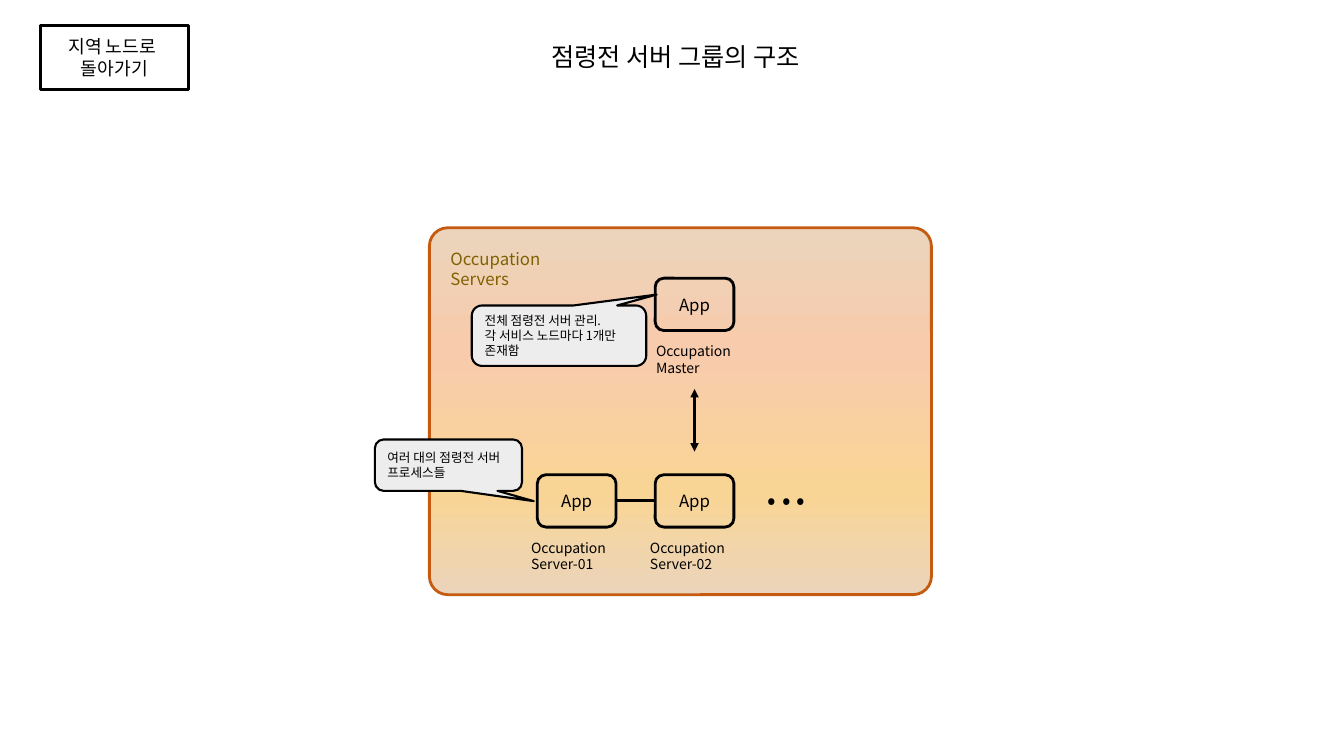
from lxml import etree
from pptx import Presentation
from pptx.dml.color import RGBColor
from pptx.enum.shapes import MSO_CONNECTOR, MSO_SHAPE
from pptx.enum.text import MSO_ANCHOR, PP_ALIGN
from pptx.oxml.ns import qn
from pptx.util import Pt

RECT, ROUND = MSO_SHAPE.RECTANGLE, MSO_SHAPE.ROUNDED_RECTANGLE
BUBBLE = MSO_SHAPE.ROUNDED_RECTANGULAR_CALLOUT
LEFT, CENTER = PP_ALIGN.LEFT, PP_ALIGN.CENTER
TOP, MIDDLE = MSO_ANCHOR.TOP, MSO_ANCHOR.MIDDLE
STRAIGHT = MSO_CONNECTOR.STRAIGHT

# Content: all lengths in points
FONT = "Noto Sans CJK KR"
COLORS = {"ink": "000000", "edge": "C55A11", "gold": "806000", "note": "EDEDED"}
STOPS = [(0, "EBD4BB"), (33, "F8CBAD"), (72, "F9D595"), (100, "EBD4BB")]
TITLE = "점령전 서버 그룹의 구조"
BACK = ["지역 노드로 ", "돌아가기"]
GROUP = (306.7, 162.7, 358.6, 262.1)
APP_W, APP_H = 56.2, 37.4
COL_1, COL_2 = 383.8, 468
ROW_1, ROW_2 = 198.7, 339.1
APPS = [  # box left, box top, label shift, label lines
    (COL_1, ROW_2, -11.5, ["Occupation", "Server-01"]),
    (COL_2, ROW_1, -6.5, ["Occupation", "Master"]),
    (COL_2, ROW_2, -10.8, ["Occupation", "Server-02"]),
]
NOTES = [  # box, adjustments, text
    ((337, 218.2, 124.6, 43.2), (0.56, -0.68, 0.17),
     "전체 점령전 서버 관리.\v각 서비스 노드마다 1개만 존재함"),
    ((267.8, 313.9, 105.1, 36.7), (0.58, 0.7, 0.17),
     "여러 대의 점령전 서버 프로세스들"),
]


def rgb(name):
    return RGBColor.from_string(COLORS[name])


def place(shape, box):
    shape.left, shape.top, shape.width, shape.height = map(Pt, box)


def write(shape, lines, size, color="ink", align=LEFT, anchor=TOP):
    frame = shape.text_frame
    frame.word_wrap = True
    frame.vertical_anchor = anchor
    frame.text = "\n".join(lines)
    for para in frame.paragraphs:
        para.alignment = align
        para.font.name = FONT
        para.font.size = Pt(size)
        para.font.color.rgb = rgb(color)


def add_box(kind, box, line="ink", width=2, fill=None, adjust=()):
    shape = slide.shapes.add_shape(kind, *map(Pt, box))
    shape.shadow.inherit = False
    shape.line.color.rgb = rgb(line)
    shape.line.width = Pt(width)
    if fill:
        shape.fill.solid()
        shape.fill.fore_color.rgb = rgb(fill)
    else:
        shape.fill.background()
    for i, value in enumerate(adjust):
        shape.adjustments[i] = value
    return shape


def add_text(box, lines, size, color="ink"):
    write(slide.shapes.add_textbox(*map(Pt, box)), lines, size, color)


def add_line(x1, y1, x2, y2, arrows=False):
    line = slide.shapes.add_connector(STRAIGHT, *map(Pt, (x1, y1, x2, y2)))
    line.line.color.rgb = rgb("ink")
    line.line.width = Pt(2)
    props = line._element.spPr
    if arrows:
        for end in ("a:headEnd", "a:tailEnd"):
            etree.SubElement(props.find(qn("a:ln")), qn(end), type="triangle")
    etree.SubElement(props, qn("a:effectLst"))


def shade(shape, stops):
    shape.fill.gradient()
    shape.fill.gradient_angle = 270
    items = shape._element.spPr.find(".//" + qn("a:gsLst"))
    for old in list(items):
        items.remove(old)
    for spot, color in stops:
        stop = etree.SubElement(items, qn("a:gs"), pos=str(spot * 1000))
        etree.SubElement(stop, qn("a:srgbClr"), val=color)


deck = Presentation()
deck.slide_width, deck.slide_height = Pt(960), Pt(540)
slide = deck.slides.add_slide(deck.slide_layouts[5])

# Title and back button
title = slide.shapes.title
place(title, (386.6, 25.9, 214.6, 28.8))
write(title, [TITLE], 18)
back = add_box(RECT, (28.8, 18, 105.8, 46.1))
write(back, BACK, 13, align=CENTER, anchor=MIDDLE)

# Server group panel
shade(add_box(ROUND, GROUP, "edge", adjust=[0.05]), STOPS)
add_text((314.6, 174.2, 121.7, 21.6), ["Occupation Servers"], 12, "gold")

# Apps with their labels
for x, y, shift, label in APPS:
    app = add_box(ROUND, (x, y, APP_W, APP_H))
    write(app, ["App"], 12, align=CENTER, anchor=MIDDLE)
    add_text((x + shift, y + APP_H + 5, 70.6, 31.7), label, 10)
add_text((541.4, 342.7, 50.4, 28.8), ["• • •"], 18)

# Links between apps
mid_x, mid_y = COL_2 + APP_W / 2, ROW_2 + APP_H / 2
add_line(COL_1 + APP_W, mid_y, COL_2, mid_y)
add_line(mid_x, 277.9, mid_x, 322.6, arrows=True)

# Callouts
for box, adjust, text in NOTES:
    note = add_box(BUBBLE, box, width=1.5, fill="note", adjust=adjust)
    write(note, [text], 9, anchor=MIDDLE)

deck.save("out.pptx")
